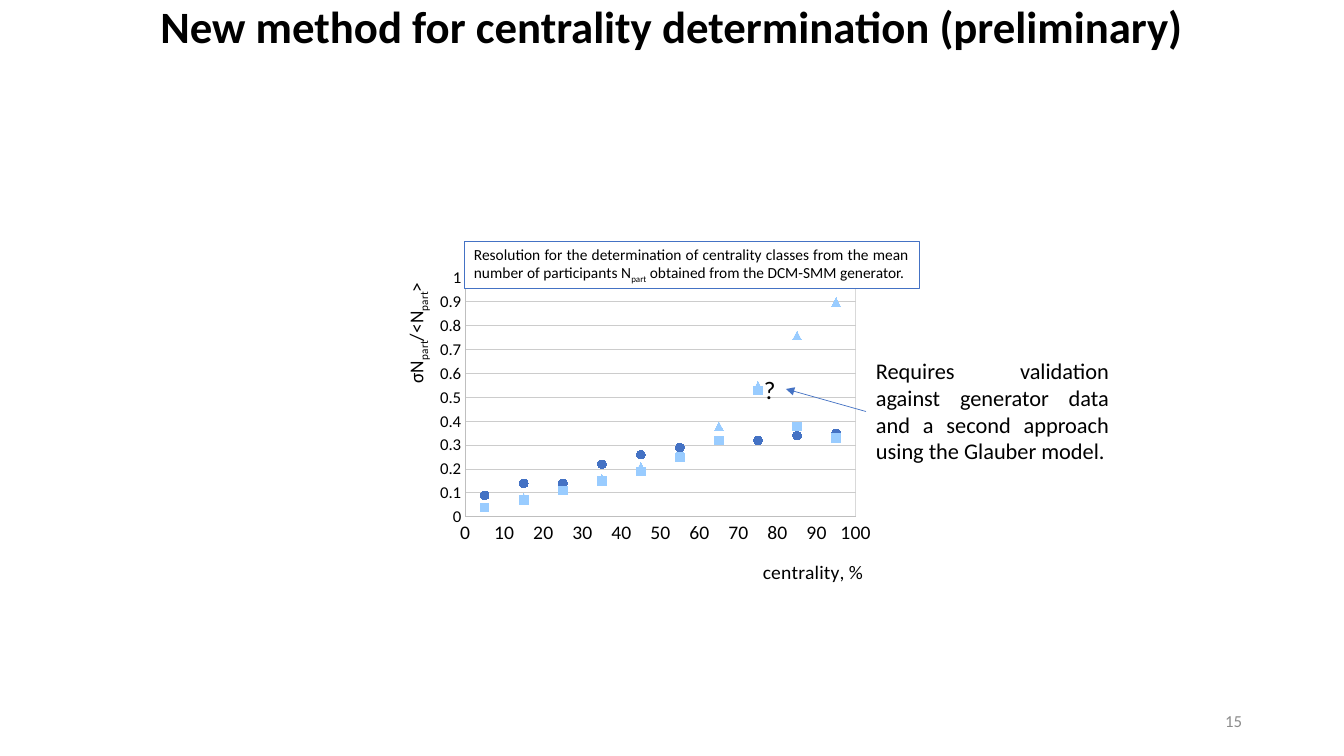
from lxml import etree
from pptx import Presentation
from pptx import util as u
from pptx.chart.data import XyChartData
from pptx.dml.color import RGBColor
from pptx.enum import chart as kinds, shapes, text
from pptx.oxml.ns import qn

BLACK = RGBColor(0x00, 0x00, 0x00)
WHITE = RGBColor(0xFF, 0xFF, 0xFF)
GRAY = RGBColor(0x8C, 0x8C, 0x8C)
AXIS = RGBColor(0xBF, 0xBF, 0xBF)
GRID = RGBColor(0xCC, 0xCC, 0xCC)
BLUE = RGBColor(0x44, 0x72, 0xC4)
SKY = RGBColor(0x99, 0xCC, 0xFF)
FONT = "Calibri"
SCALE = 914400 / 100.8

CENTRALITY = range(95, 0, -10)
MARKER = kinds.XL_MARKER_STYLE
SERIES = [
    ("Series 1", MARKER.SQUARE, SKY,
     [0.33, 0.38, 0.53, 0.32, 0.25, 0.19, 0.15, 0.11, 0.07, 0.04]),
    ("Series 2", MARKER.CIRCLE, BLUE,
     [0.35, 0.34, 0.32, 0.32, 0.29, 0.26, 0.22, 0.14, 0.14, 0.09]),
    ("Series 3", MARKER.TRIANGLE, SKY,
     [0.9, 0.76, 0.55, 0.38, 0.28, 0.21, 0.16, 0.12, 0.08, 0.04]),
]


def px(*lengths):
    return [u.Emu(round(length * SCALE)) for length in lengths]


def add_spans(para, parts, size, color=BLACK, bold=False):
    for words, lowered in parts:
        span = para.add_run()
        span.text = words
        span.font.name = FONT
        span.font.size = u.Pt(size)
        span.font.bold = bold
        span.font.color.rgb = color
        if lowered:
            span.font._element.set("baseline", "-25000")


def fill_text(box, parts, size, align, color=BLACK, bold=False, wrap=True,
              anchor=text.MSO_ANCHOR.TOP):
    frame = box.text_frame
    frame.word_wrap = wrap
    frame.vertical_anchor = anchor
    para = frame.paragraphs[0]
    para.alignment = align
    add_spans(para, parts, size, color, bold)
    return para


def add_label(page, place, words, size, align=text.PP_ALIGN.LEFT, **style):
    box = page.shapes.add_textbox(*px(*place))
    fill_text(box, [(words, False)], size, align, **style)
    return box


def add_caption(page, place, parts):
    box = page.shapes.add_shape(shapes.MSO_SHAPE.RECTANGLE, *px(*place))
    box.shadow.inherit = False
    box.fill.solid()
    box.fill.fore_color.rgb = WHITE
    box.line.color.rgb = BLUE
    box.line.width = u.Pt(0.25)
    fill_text(box, parts, 11, text.PP_ALIGN.JUSTIFY, anchor=text.MSO_ANCHOR.MIDDLE)


def add_arrow(page, source, target):
    arrow = page.shapes.add_connector(shapes.MSO_CONNECTOR.STRAIGHT, 0, 0, 0, 0)
    arrow.begin_connect(source, 1)
    arrow.end_connect(target, 3)
    arrow.line.color.rgb = BLUE
    arrow.line.width = u.Pt(0.5)
    etree.SubElement(arrow.line._get_or_add_ln(), qn("a:tailEnd"), type="triangle")
    etree.SubElement(arrow._element.spPr, qn("a:effectLst"))


def set_layout(owner, index, **settings):
    for old in owner.findall(qn("c:layout")):
        owner.remove(old)
    layout = etree.Element(qn("c:layout"))
    manual = etree.SubElement(layout, qn("c:manualLayout"))
    for name, value in settings.items():
        etree.SubElement(manual, qn("c:" + name), val=str(value))
    owner.insert(index, layout)


def style_axis(axis, top, step, size, parts, turn, x, y):
    axis.minimum_scale = 0
    axis.maximum_scale = top
    axis.major_unit = step
    axis.major_tick_mark = kinds.XL_TICK_MARK.NONE
    axis.minor_tick_mark = kinds.XL_TICK_MARK.NONE
    axis.has_major_gridlines = False
    axis.format.line.color.rgb = AXIS
    axis.format.line.width = u.Pt(0.75)
    labels = axis.tick_labels
    labels.number_format = "General"
    labels.number_format_is_linked = False
    labels.font.name = FONT
    labels.font.size = u.Pt(size)
    labels.font.color.rgb = BLACK
    frame = axis.axis_title.text_frame
    frame._txBody.bodyPr.set("rot", str(turn))
    add_spans(frame.paragraphs[0], parts, 14)
    set_layout(axis.axis_title._element, 1, xMode="edge", yMode="edge", x=x, y=y)


def add_border(plot_area):
    shape = etree.SubElement(plot_area, qn("c:spPr"))
    etree.SubElement(shape, qn("a:noFill"))
    line = etree.SubElement(shape, qn("a:ln"), w="9525")
    fill = etree.SubElement(line, qn("a:solidFill"))
    etree.SubElement(fill, qn("a:srgbClr"), val="D9D9D9")


def add_scatter(page, place):
    data = XyChartData()
    for name, _, _, values in SERIES:
        series = data.add_series(name)
        for x, y in zip(CENTRALITY, values):
            series.add_data_point(x, y)
    chart = page.shapes.add_chart(
        kinds.XL_CHART_TYPE.XY_SCATTER, *px(*place), data).chart
    chart.has_title = False
    chart.has_legend = False
    chart.font.name = FONT
    chart.font.size = u.Pt(14)
    chart.font.color.rgb = BLACK
    plot = chart.plots[0]
    plot.vary_by_categories = False
    for series, (_, style, color, _) in zip(plot.series, SERIES):
        series.smooth = False
        series.format.line.fill.background()
        marker = series.marker
        marker.style = style
        marker.size = 6
        marker.format.fill.solid()
        marker.format.fill.fore_color.rgb = color
        marker.format.line.color.rgb = color
    style_axis(chart.category_axis, 100, 10, 14,
               [("centrality, %", False)], 0, 0.76, 0.91)
    style_axis(chart.value_axis, 1, 0.1, 12,
               [("σN", False), ("part", True), ("/<N", False),
                ("part", True), (">", False)], -5400000, 0.05, 0.055)
    chart.value_axis.has_major_gridlines = True
    grid = chart.value_axis.major_gridlines.format.line
    grid.color.rgb = GRID
    grid.width = u.Pt(0.75)
    plot_area = chart._chartSpace.chart.plotArea
    set_layout(plot_area, 0, layoutTarget="inner", xMode="edge", yMode="edge",
               x=0.18, y=0.05, w=0.77, h=0.74)
    add_border(plot_area)


def main():
    deck = Presentation()
    deck.slide_width, deck.slide_height = px(1344, 756)
    page = deck.slides.add_slide(deck.slide_layouts[6])
    add_label(page, (950, 701, 302, 40), "15", 12, text.PP_ALIGN.RIGHT,
              color=GRAY, anchor=text.MSO_ANCHOR.MIDDLE)
    add_scatter(page, (374, 262, 507, 329))
    remark = add_label(
        page, (866, 352, 253, 119),
        "Requires validation against generator data and a second approach "
        "using the Glauber model.", 16, text.PP_ALIGN.JUSTIFY)
    add_caption(page, (464, 241, 455, 47), [
        ("Resolution for the determination of centrality classes from the mean "
         "number of participants N", False),
        ("part", True),
        (" obtained from the DCM-SMM generator. ", False)])
    question = add_label(page, (754, 369, 32, 40), "?", 18, wrap=False)
    add_arrow(page, remark, question)
    title = add_label(page, (0, 0, 1344, 82),
                      "New method for centrality determination (preliminary)",
                      32, text.PP_ALIGN.CENTER, bold=True)
    title.text_frame.paragraphs[0].line_spacing = 0.9
    deck.save("out.pptx")


if __name__ == "__main__":
    main()
